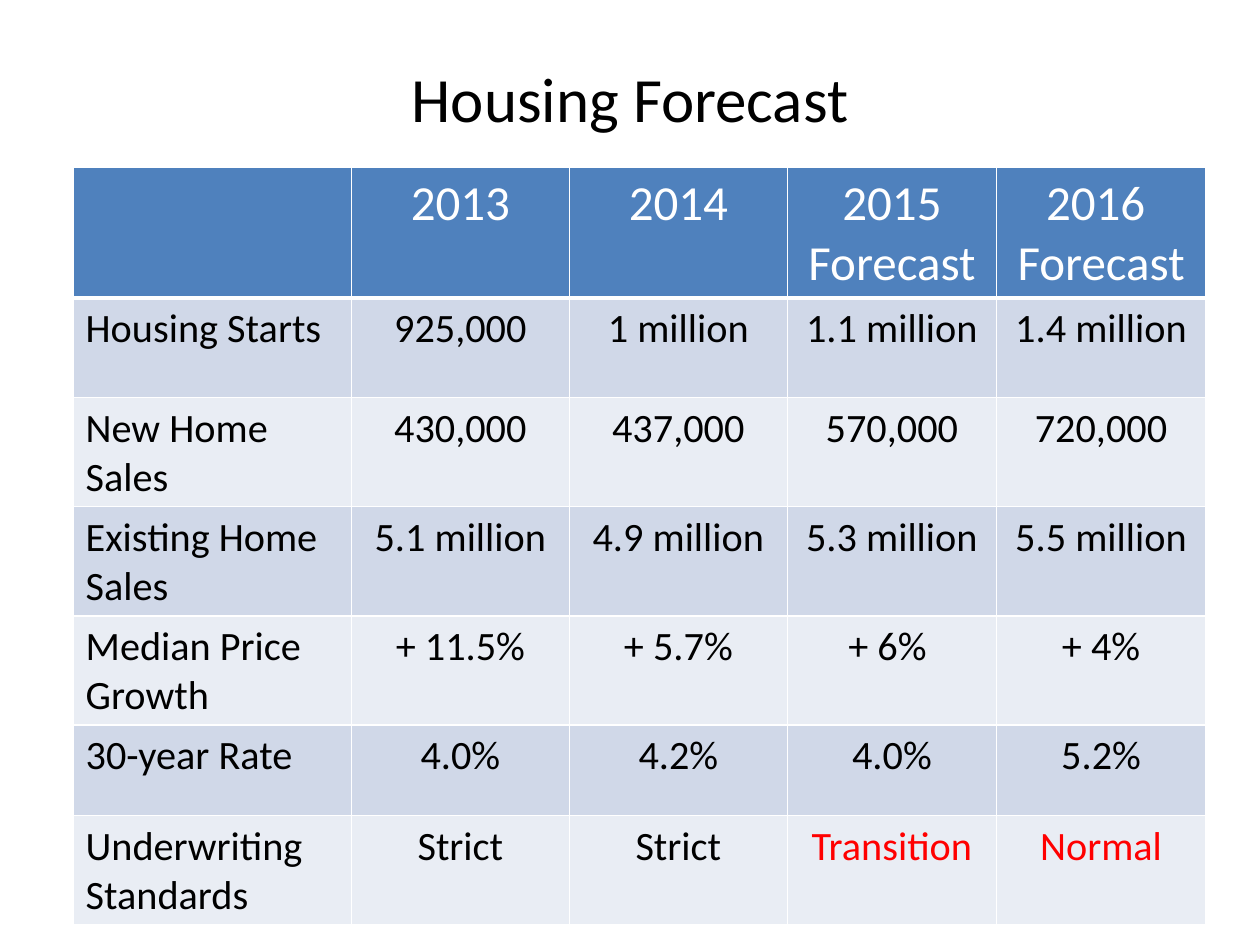
from dataclasses import dataclass

import pptx
import pptx.util
import pptx.oxml
from pptx.dml.color import RGBColor
from pptx.enum.text import MSO_ANCHOR, PP_ALIGN
from pptx.oxml.ns import nsdecls

PX = 9144  # EMU in one px, 100 px to the inch


@dataclass(frozen=True)
class Theme:
    font: str = "Calibri"
    ink: str = "000000"
    white: str = "FFFFFF"
    head: str = "4F81BD"
    bands: tuple[str, str] = ("D0D8E8", "E9EDF4")
    alert: str = "FF0000"
    title: int = 36
    label: int = 28
    body: int = 23


@dataclass(frozen=True)
class Row:
    high: int
    cells: tuple[str, ...]


THEME = Theme()
WIDTHS = (221, 173, 173, 166, 166)
ROWS = (
    Row(103, ("", "2013", "2014", "2015\nForecast", "2016 \nForecast")),
    Row(79, ("Housing Starts", "925,000", "1 million", "1.1 million", "1.4 million")),
    Row(83, ("New Home Sales", "430,000", "437,000", "570,000", "720,000")),
    Row(86, ("Existing Home Sales", "5.1 million", "4.9 million", "5.3 million", "5.5 million")),
    Row(86, ("Median Price Growth", "+ 11.5%", "+ 5.7%", "+ 6% ", "+ 4%")),
    Row(72, ("30-year Rate", "4.0%", "4.2%", "4.0%", "5.2%")),
    Row(86, ("Underwriting Standards", "Strict", "Strict", "Transition", "Normal")),
)
ALERTS = {"Transition", "Normal"}


def px(size: int) -> pptx.util.Emu:
    return pptx.util.Emu(size * PX)


def write(frame, text: str, size: int, color: str, align: PP_ALIGN) -> None:
    frame.text = text
    for para in frame.paragraphs:
        para.alignment = align
        para.font.name = THEME.font
        para.font.size = pptx.util.Pt(size)
        para.font.bold = False
        para.font.color.rgb = RGBColor.from_string(color)


def edge(cell, base: int) -> None:
    """Draw white cell borders, with the bottom one base points wide."""
    props = cell._tc.get_or_add_tcPr()
    for spot, (side, wide) in enumerate(zip("LRTB", (1, 1, 1, base))):
        props.insert(spot, pptx.oxml.parse_xml(
            f'<a:ln{side} {nsdecls("a")} w="{pptx.util.Pt(wide)}"><a:solidFill>'
            f'<a:srgbClr val="{THEME.white}"/></a:solidFill></a:ln{side}>'))


def add_title(slide, text: str) -> None:
    frame = slide.shapes.add_textbox(px(50), px(30), px(900), px(95)).text_frame
    frame.word_wrap = True
    frame.vertical_anchor = MSO_ANCHOR.MIDDLE
    write(frame, text, THEME.title, THEME.ink, PP_ALIGN.CENTER)


def add_grid(slide, rows: tuple[Row, ...]) -> None:
    table = slide.shapes.add_table(
        len(rows), len(WIDTHS), px(58), px(133),
        px(sum(WIDTHS)), px(sum(row.high for row in rows))).table
    table.first_row = table.horz_banding = False
    for col, wide in zip(table.columns, WIDTHS):
        col.width = px(wide)
    for r, row in enumerate(rows):
        table.rows[r].height = px(row.high)
        for c, text in enumerate(row.cells):
            cell = table.cell(r, c)
            top = r == 0
            fill = THEME.head if top else THEME.bands[(r - 1) % 2]
            cell.fill.solid()
            cell.fill.fore_color.rgb = RGBColor.from_string(fill)
            edge(cell, 3 if top else 1)
            ink = THEME.white if top else THEME.alert if text in ALERTS else THEME.ink
            write(cell.text_frame, text, THEME.label if top else THEME.body, ink,
                  PP_ALIGN.CENTER if c else PP_ALIGN.LEFT)


def main() -> None:
    deck = pptx.Presentation()
    deck.slide_width, deck.slide_height = px(1000), px(750)
    slide = deck.slides.add_slide(deck.slide_layouts[6])
    add_title(slide, "Housing Forecast")
    add_grid(slide, ROWS)
    deck.save("out.pptx")


if __name__ == "__main__":
    main()
